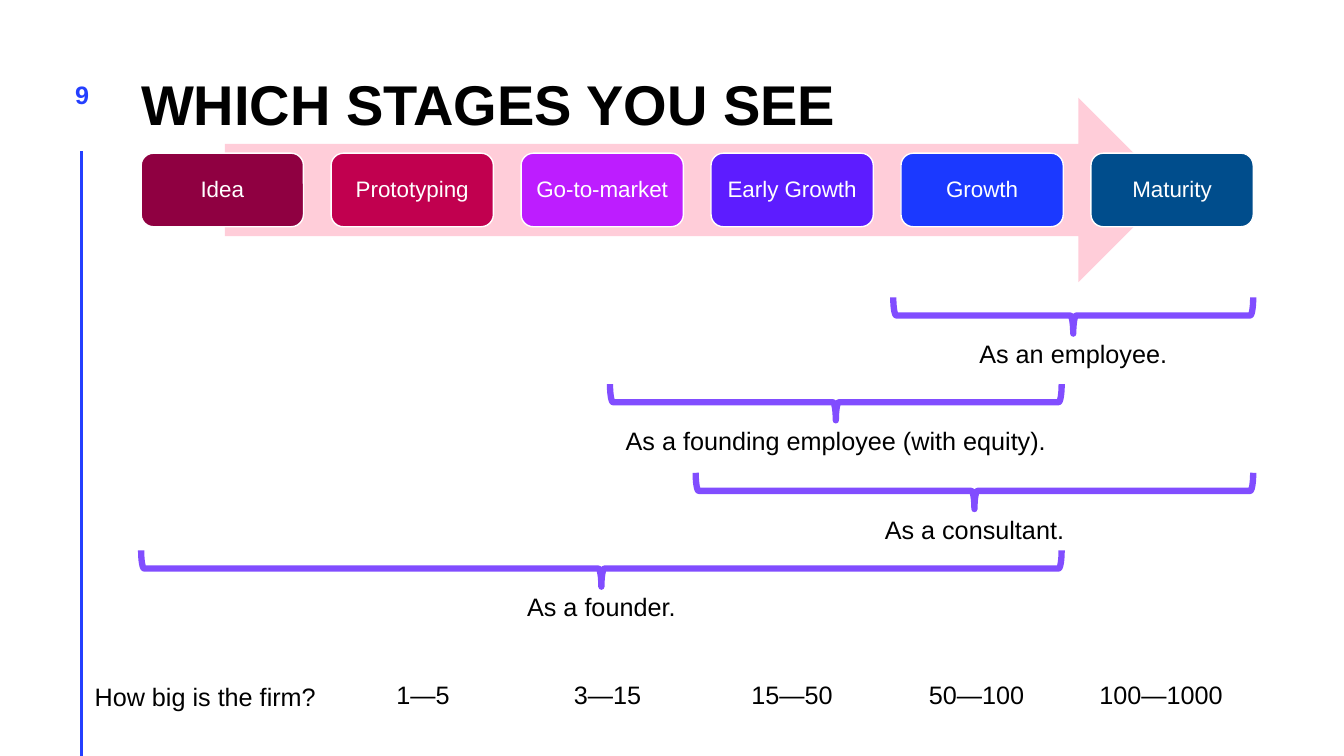
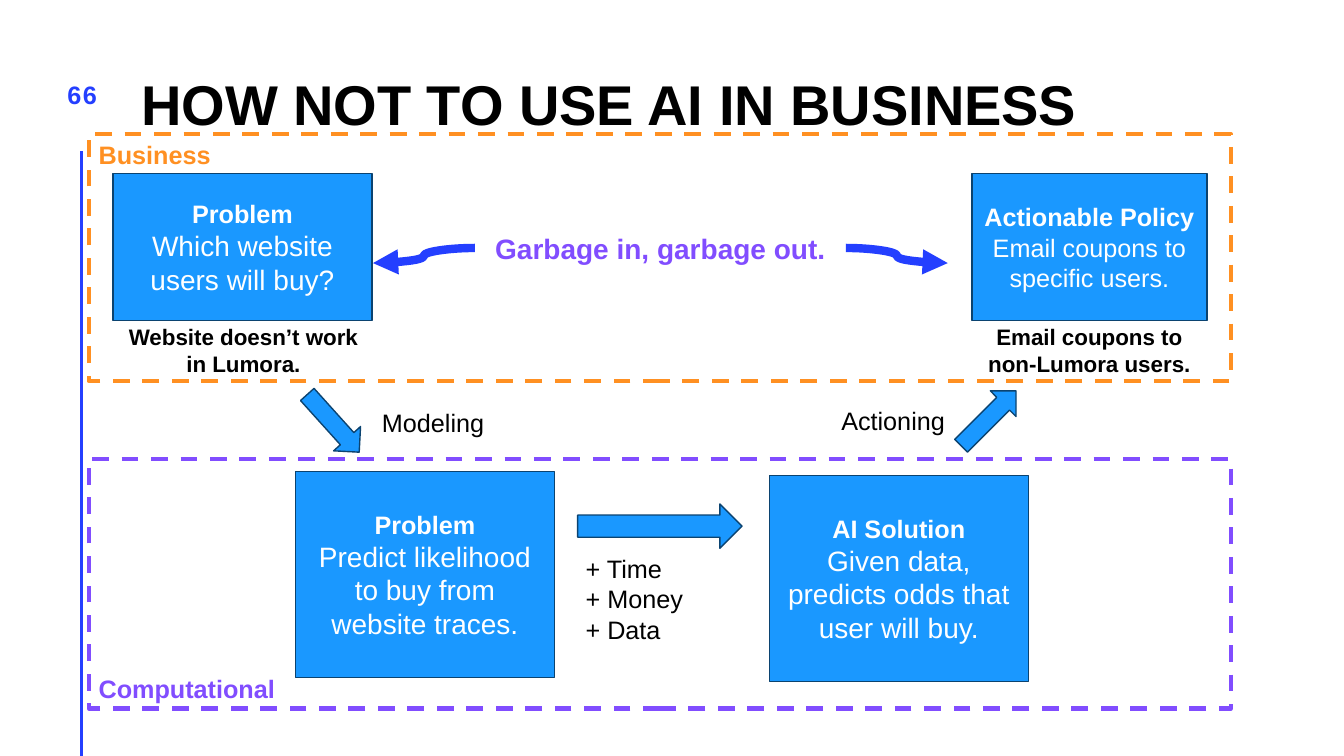
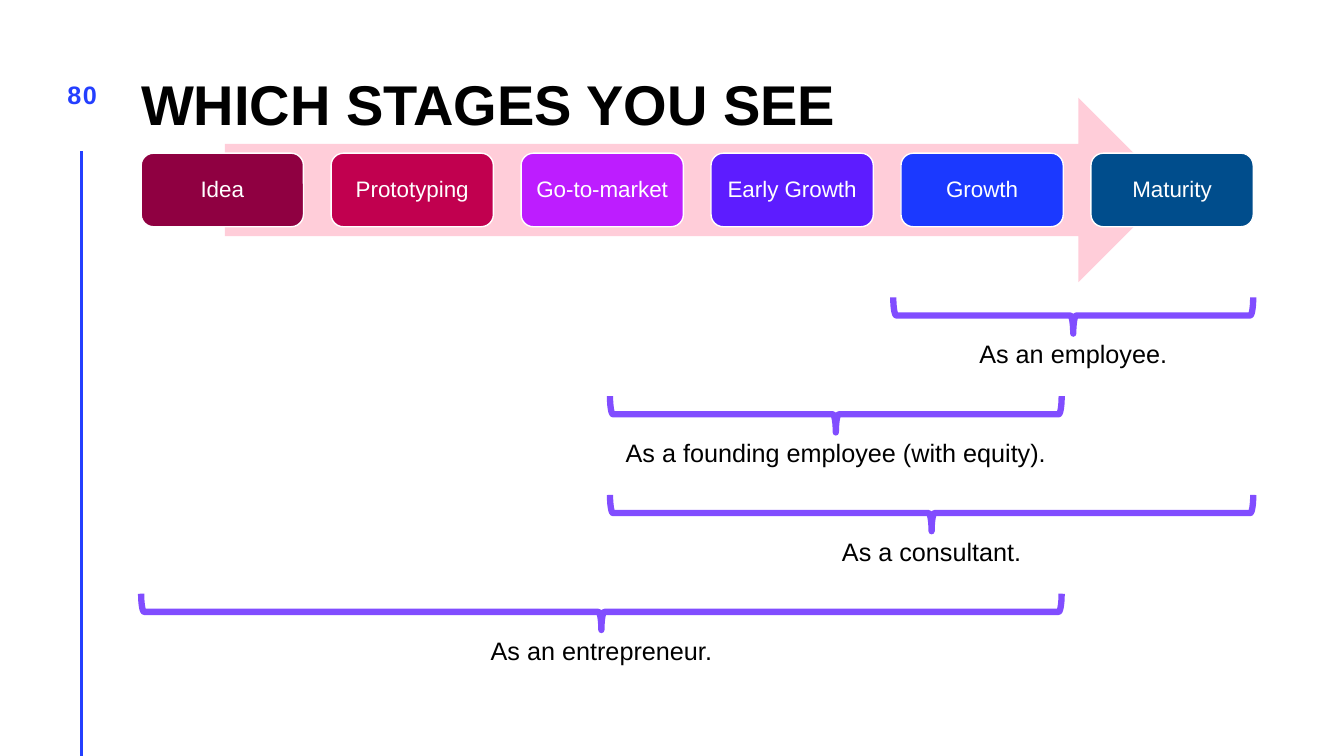
from dataclasses import dataclass

from lxml import etree
from pptx import Presentation
from pptx.dml.color import RGBColor
from pptx.enum import dml, shapes, text
from pptx.oxml import ns
from pptx.util import Inches, Pt


@dataclass(frozen=True)
class Theme:
    font: str = "Arial"
    ink: str = "000000"
    paper: str = "FFFFFF"
    accent: str = "243FFF"
    violet: str = "814DFF"
    orange: str = "FF9022"
    block: str = "1A98FF"
    block_edge: str = "0B4370"
    timeline: str = "FFCDD9"
    title: int = 40
    large: int = 20
    body: int = 18
    small: int = 16


T = Theme()
SHAPE = shapes.MSO_SHAPE
ALIGN = text.PP_ALIGN
ANCHOR = text.MSO_ANCHOR

CONTENT_LEFT, CONTENT_WIDTH = 1.4, 11.03
STAGE_TOP, STAGE_WIDTH, STAGE_HEIGHT = 1.52, 1.61, 0.73
BRACE_HEIGHT = 0.36

STAGES = [
    ("Idea", "8F0041"),
    ("Prototyping", "C1004F"),
    ("Go-to-market", "BD1DFF"),
    ("Early Growth", "5D1CFF"),
    ("Growth", "1B39FF"),
    ("Maturity", "004D8C"),
]
# Role, left edge, right edge, top
FIRST_ROLES = [
    ("As an employee.", 8.86, 12.43, 2.95),
    ("As a founding employee (with equity).", 6.05, 10.53, 3.81),
    ("As a consultant.", 6.9, 12.43, 4.69),
    ("As a founder.", 1.4, 10.53, 5.46),
]
LATER_SPANS = [
    ("As an employee.", 8.86, 12.43),
    ("As a founding employee (with equity).", 6.05, 10.53),
    ("As a consultant.", 6.05, 12.43),
    ("As an entrepreneur.", 1.4, 10.53),
]
LATER_ROLES = [(*span, 2.95 + 0.98 * i) for i, span in enumerate(LATER_SPANS)]
FIRM_SIZES = ["1—5", "3—15", "15—50", "50—100", "100—1000"]

ZONES = [
    ("Business", T.orange, ANCHOR.TOP, (0.88, 1.33, 11.33, 2.45)),
    ("Computational", T.violet, ANCHOR.BOTTOM, (0.88, 4.55, 11.33, 2.48)),
]
STEPS = [
    ("Problem", "Which website users will buy?", T.large, (1.12, 1.72, 2.57, 1.46)),
    ("Actionable Policy", "Email coupons to specific users.", T.body, (9.64, 1.72, 2.33, 1.46)),
    ("Problem", "Predict likelihood to buy from website traces.", T.large, (2.93, 4.68, 2.57, 2.04)),
    ("AI Solution", "Given data, predicts odds that user will buy.", T.large, (7.63, 4.72, 2.57, 2.04)),
]
STEP_ARROWS = [
    ((2.92, 4.02, 0.77, 0.36), 48),
    ((5.73, 5, 1.63, 0.44), 0),
    ((9.42, 3.97, 0.77, 0.36), 315),
]
REMARKS = [
    (["+ Time", "+ Money", "+ Data"], (5.71, 5.44, 1.67, 1.01), {}),
    (["Modeling"], (3.69, 3.99, 1.48, 0.4), {}),
    (["Actioning"], (7.99, 3.97, 1.48, 0.4), {"align": ALIGN.RIGHT}),
    (["Garbage in, garbage out."], (4.71, 2.25, 3.68, 0.44),
     {"align": ALIGN.CENTER, "size": T.large, "color": T.violet, "bold": True}),
    (["Website doesn’t work in Lumora."], (1.13, 3.16, 2.57, 0.64),
     {"align": ALIGN.CENTER, "size": T.small, "bold": True}),
    (["Email coupons to non-Lumora users."], (9.52, 3.16, 2.57, 0.64),
     {"align": ALIGN.CENTER, "size": T.small, "bold": True}),
]
GARBAGE_LINKS = [((4.71, 2.46), (3.7, 2.61)), ((8.39, 2.46), (9.4, 2.61))]


def rgb(color):
    return RGBColor.from_string(color)


def inches(values):
    return [Inches(value) for value in values]


def write(frame, lines, *, size=T.body, color=T.ink, bold=False, align=ALIGN.LEFT,
          anchor=ANCHOR.TOP, inset=None, spacing=None, tracking=None):
    """Fill a frame; a line is a string or (string, size, bold)."""
    frame.word_wrap = True
    frame.vertical_anchor = anchor
    if inset is not None:
        frame.margin_left = frame.margin_right = Inches(inset)
        frame.margin_top = frame.margin_bottom = Inches(inset)
    for i, line in enumerate(lines):
        words, line_size, line_bold = (line, size, bold) if isinstance(line, str) else line
        paragraph = frame.add_paragraph() if i else frame.paragraphs[0]
        paragraph.alignment = align
        if spacing is not None:
            paragraph.line_spacing = spacing
        run = paragraph.add_run()
        run.text = words
        run.font.name, run.font.size, run.font.bold = T.font, Pt(line_size), line_bold
        run.font.color.rgb = rgb(color)
        if tracking:
            run.font._element.set("spc", str(tracking))


def add_text(slide, lines, box, **style):
    write(slide.shapes.add_textbox(*inches(box)).text_frame, lines, **style)


def draw(slide, kind, box, fill=None, line=None, weight=1, rotation=0):
    shape = slide.shapes.add_shape(kind, *inches(box))
    shape.shadow.inherit = False
    shape.rotation = rotation
    if fill:
        shape.fill.solid()
        shape.fill.fore_color.rgb = rgb(fill)
    else:
        shape.fill.background()
    if line:
        shape.line.color.rgb = rgb(line)
        shape.line.width = Pt(weight)
    else:
        shape.line.fill.background()
    return shape


def connect(slide, start, end, weight, kind=shapes.MSO_CONNECTOR.STRAIGHT, arrow=False):
    connector = slide.shapes.add_connector(kind, *inches(start + end))
    connector.line.color.rgb = rgb(T.accent)
    connector.line.width = Pt(weight)
    properties = connector._element.spPr
    etree.SubElement(properties, ns.qn("a:effectLst"))
    if arrow:
        outline = properties.find(ns.qn("a:ln"))
        etree.SubElement(outline, ns.qn("a:tailEnd"), type="triangle")


def add_base(deck, title, number):
    """Add a slide with the shared side rule, title and number."""
    slide = deck.slides.add_slide(deck.slide_layouts[5])
    heading = slide.shapes.title
    heading.left, heading.top, heading.width, heading.height = inches(
        (CONTENT_LEFT, -0.04, CONTENT_WIDTH, 1.4))
    write(heading.text_frame, [title], size=T.title, bold=True,
          anchor=ANCHOR.BOTTOM, inset=0, spacing=Pt(T.title))
    connect(slide, (0.81, 1.5), (0.81, 7.5), 2)
    add_text(slide, [number], (0.53, 0.79, 0.57, 0.57), color=T.accent, bold=True,
             align=ALIGN.CENTER, inset=0, tracking=100)
    return slide


def add_role(slide, role, left, right, top):
    """Draw a brace opening upward over a span, with its label below."""
    span = right - left
    center_x, center_y = (left + right) / 2, top + BRACE_HEIGHT / 2
    upright = (center_x - BRACE_HEIGHT / 2, center_y - span / 2, BRACE_HEIGHT, span)
    draw(slide, SHAPE.LEFT_BRACE, upright, line=T.violet, weight=4.5, rotation=270)
    add_text(slide, [role], (left - 0.2, top + BRACE_HEIGHT, span + 0.4, 0.4),
             align=ALIGN.CENTER)


def build_stages(deck, number, roles):
    slide = add_base(deck, "WHICH STAGES YOU SEE", number)
    for role in roles:
        add_role(slide, *role)
    draw(slide, SHAPE.RIGHT_ARROW, (2.23, 0.97, 9.38, 1.83), fill=T.timeline)
    pitch = (CONTENT_WIDTH - STAGE_WIDTH) / (len(STAGES) - 1)
    for i, (name, color) in enumerate(STAGES):
        box = (CONTENT_LEFT + i * pitch, STAGE_TOP, STAGE_WIDTH, STAGE_HEIGHT)
        stage = draw(slide, SHAPE.ROUNDED_RECTANGLE, box, fill=color, line=T.paper)
        write(stage.text_frame, [name], size=T.small, color=T.paper, align=ALIGN.CENTER,
              anchor=ANCHOR.MIDDLE, inset=0.07, spacing=0.9)
    return slide


def add_firm_sizes(slide):
    table = slide.shapes.add_table(
        1, len(FIRM_SIZES), *inches((3.28, 6.71, 9.15, 0.41))).table
    table.first_row = table.horz_banding = False
    for cell, size in zip(table.rows[0].cells, FIRM_SIZES):
        cell.fill.background()
        write(cell.text_frame, [size], align=ALIGN.CENTER)
    add_text(slide, ["How big is the firm?"], (0.84, 6.34, 2.67, 1.14),
             anchor=ANCHOR.MIDDLE)


def build_misuse(deck):
    slide = add_base(deck, "HOW NOT TO USE AI IN BUSINESS", "66")
    for name, color, anchor, box in ZONES:
        zone = draw(slide, SHAPE.RECTANGLE, box, line=color, weight=3)
        zone.line.dash_style = dml.MSO_LINE.DASH
        write(zone.text_frame, [name], color=color, bold=True, anchor=anchor)
    for name, detail, size, box in STEPS:
        step = draw(slide, SHAPE.RECTANGLE, box, fill=T.block, line=T.block_edge)
        write(step.text_frame, [(name, T.body, True), (detail, size, False)],
              color=T.paper, align=ALIGN.CENTER, anchor=ANCHOR.MIDDLE)
    for box, rotation in STEP_ARROWS:
        draw(slide, SHAPE.RIGHT_ARROW, box, fill=T.block, line=T.block_edge,
             rotation=rotation)
    for lines, box, style in REMARKS:
        add_text(slide, lines, box, **style)
    for start, end in GARBAGE_LINKS:
        connect(slide, start, end, 6, kind=shapes.MSO_CONNECTOR.CURVE, arrow=True)


def main():
    deck = Presentation()
    deck.slide_width, deck.slide_height = Inches(13.33), Inches(7.5)
    add_firm_sizes(build_stages(deck, "9", FIRST_ROLES))
    build_misuse(deck)
    build_stages(deck, "80", LATER_ROLES)
    deck.save("out.pptx")


if __name__ == "__main__":
    main()
